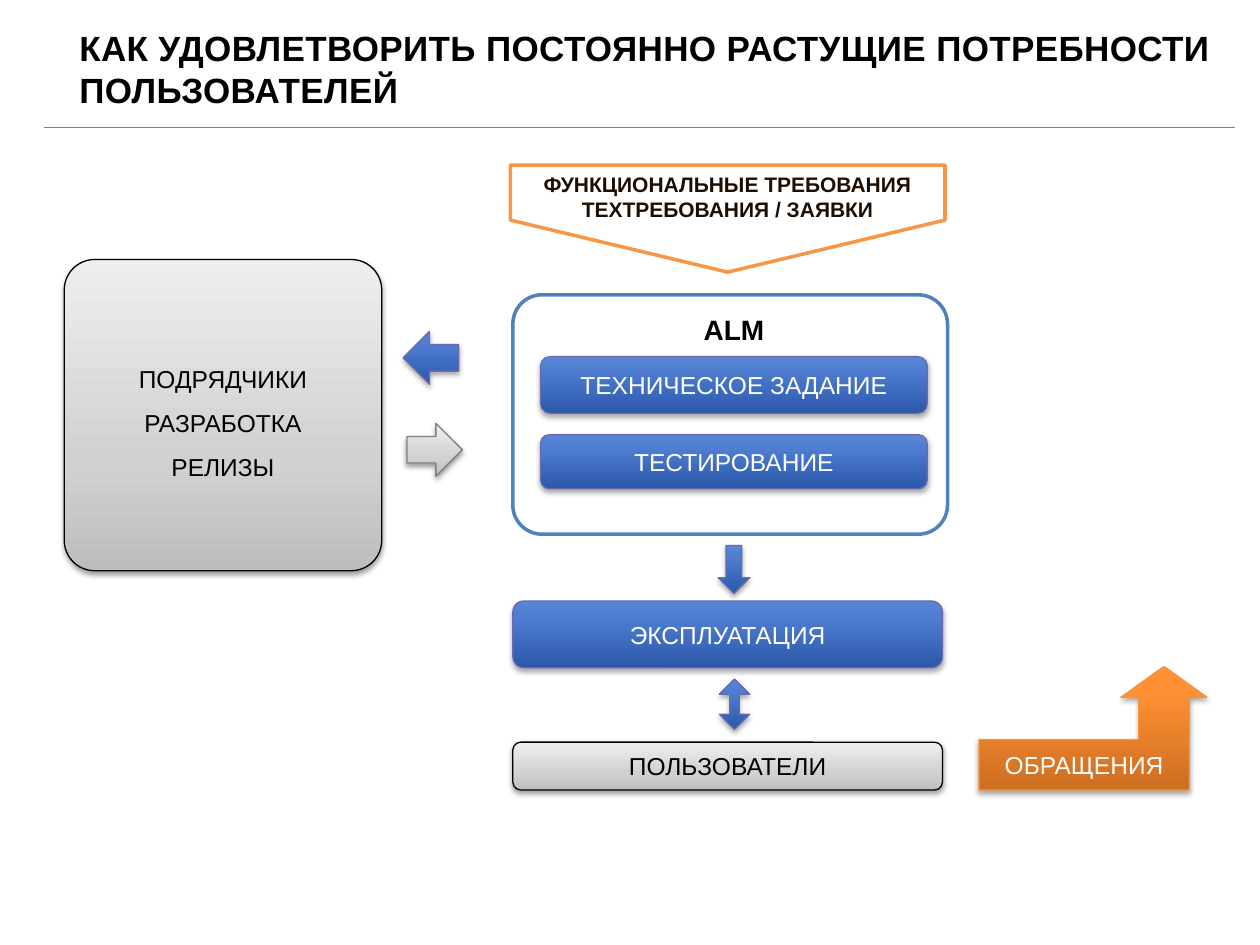
from pptx import Presentation
from pptx.dml.color import RGBColor
from pptx.enum.shapes import MSO_CONNECTOR, MSO_SHAPE as Kind
from pptx.enum.text import MSO_ANCHOR, PP_ALIGN
from pptx.oxml.ns import qn
from pptx.util import Inches, Pt
from lxml.etree import SubElement

COLS, ROWS = 100, 75
BLUE = [(0, "2B58A8"), (76, "4E7DD2"), (100, "5A86D4")]
GREY = [(0, "BDBDBD"), (35, "D1D1D1"), (100, "EEEEEE")]
ORANGE = [(0, "CC6E20"), (80, "FF9034"), (100, "FF9136")]
DARK, SOFT = (35, 1.8), (38, 1.6)  # shadow opacity in percent, distance in points


def color(code):
    return RGBColor.from_string(code)


def node(parent, tag, **attrs):
    item = SubElement(parent, qn(tag))
    for key, value in attrs.items():
        item.set(key, str(value))
    return item


def write(shape, text, size=14, ink="FFFFFF", bold=False, align=PP_ALIGN.CENTER,
          anchor=MSO_ANCHOR.MIDDLE, wrap=True, gap=None, track=None):
    """Fill a shape with one paragraph for each line of text."""
    frame = shape.text_frame
    frame.word_wrap = wrap
    frame.vertical_anchor = anchor
    for i, line in enumerate(text.split("\n")):
        para = frame.paragraphs[0] if i == 0 else frame.add_paragraph()
        para.alignment = align
        if gap:
            para.line_spacing = gap
        run = para.add_run()
        run.text = line
        font = run.font
        font.name, font.size, font.bold = "Arial", Pt(size), bold
        font.color.rgb = color(ink)
        if track:
            run._r.get_or_add_rPr().set("spc", str(track))
    return frame


class Board:
    """A slide on a grid of COLS by ROWS cells."""

    def __init__(self):
        self.deck = Presentation()
        self.deck.slide_width, self.deck.slide_height = Inches(10), Inches(7.5)
        self.slide = self.deck.slides.add_slide(self.deck.slide_layouts[6])

    def scale(self, x, y):
        return (round(self.deck.slide_width * x / COLS),
                round(self.deck.slide_height * y / ROWS))

    def place(self, x, y, w, h):
        return *self.scale(x, y), *self.scale(w, h)

    def label(self, box, text, **style):
        return write(self.slide.shapes.add_textbox(*self.place(*box)), text, **style)

    def rule(self, start, end, ink):
        line = self.slide.shapes.add_connector(
            MSO_CONNECTOR.STRAIGHT, *self.scale(*start), *self.scale(*end))
        line.line.color.rgb, line.line.width = color(ink), Pt(0.75)
        node(line._element.spPr, "a:effectLst")

    def shape(self, kind, box, edge, width=2, adjust=()):
        """Add a white shape with a coloured outline and no shadow."""
        item = self.slide.shapes.add_shape(kind, *self.place(*box))
        for i, value in enumerate(adjust):
            item.adjustments[i] = value
        item.fill.solid()
        item.fill.fore_color.rgb = color("FFFFFF")
        item.line.color.rgb, item.line.width = color(edge), Pt(width)
        item.shadow.inherit = False
        return item

    def glossy(self, kind, box, stops=BLUE, edge="696BB0", shade=DARK,
               adjust=(), text=None, **style):
        """Add a shape with a gradient rising from dark to light, and a shadow."""
        item = self.shape(kind, box, edge, 0.75, adjust)
        item.fill.gradient()
        item.fill.gradient_angle = 90
        props = item._element.spPr
        ramp = props.find(qn("a:gradFill")).find(qn("a:gsLst"))
        ramp.clear()
        for share, code in stops:
            node(node(ramp, "a:gs", pos=share * 1000), "a:srgbClr", val=code)
        alpha, dist = shade
        cast = node(props.find(qn("a:effectLst")), "a:outerShdw", blurRad=Pt(3.1),
                    dist=Pt(dist), dir=5400000, rotWithShape=0)
        node(node(cast, "a:srgbClr", val="000000"), "a:alpha", val=alpha * 1000)
        if text:
            write(item, text, **style)


def main():
    board = Board()
    board.rule((3.5, 10.1), (98, 10.1), "808080")
    title = board.label(
        (0, 1.3, 100.4, 8.2),
        "КАК УДОВЛЕТВОРИТЬ ПОСТОЯННО РАСТУЩИЕ ПОТРЕБНОСТИ ПОЛЬЗОВАТЕЛЕЙ",
        size=20, ink="000000", bold=True, align=PP_ALIGN.LEFT, track=20)
    title.margin_left = Inches(0.63)

    left, wide = 40.7, 34.1
    board.shape(Kind.ROUNDED_RECTANGLE, (left, 23.4, 34.5, 19), "4F81BD",
                adjust=[0.122])
    needs = board.shape(Kind.RIGHT_ARROW, (53.5, 0.1, 8.5, 34.5), "F79646",
                        adjust=[1, 0.486])
    needs.rotation = 90
    frame = write(needs, "ФУНКЦИОНАЛЬНЫЕ ТРЕБОВАНИЯ\nТЕХТРЕБОВАНИЯ / ЗАЯВКИ",
                  size=12, ink="1E0E01", bold=True, anchor=MSO_ANCHOR.TOP)
    frame._txBody.bodyPr.set("vert", "vert270")

    pale = dict(stops=GREY, edge="000000", shade=SOFT, ink="000000")
    for box, text, style in [
        ((5.1, 20.6, 25.2, 24.7), "ПОДРЯДЧИКИ\nРАЗРАБОТКА\nРЕЛИЗЫ",
         dict(pale, adjust=[0.098], gap=1.5)),
        ((42.9, 28.3, 30.7, 4.5), "ТЕХНИЧЕСКОЕ ЗАДАНИЕ", {}),
        ((42.9, 34.5, 30.7, 4.3), "ТЕСТИРОВАНИЕ", {}),
        ((left, 47.7, wide, 5.3), "ЭКСПЛУАТАЦИЯ", {}),
        ((left, 58.9, wide, 3.8), "ПОЛЬЗОВАТЕЛИ", pale),
    ]:
        board.glossy(Kind.ROUNDED_RECTANGLE, box, text=text, **style)
    board.label((54.8, 24.3, 6.9, 3.7), "ALM", size=16, ink="000000", bold=True,
                anchor=MSO_ANCHOR.TOP, wrap=False)

    board.glossy(Kind.LEFT_ARROW, (32, 26.3, 4.4, 4.2))
    board.glossy(Kind.RIGHT_ARROW, (32.3, 33.6, 4.4, 4.2), GREY, "808080", SOFT)
    board.glossy(Kind.DOWN_ARROW, (57, 43.3, 2.5, 3.8))
    board.glossy(Kind.UP_DOWN_ARROW, (57.1, 53.9, 2.4, 4), adjust=[0.5, 0.309])
    board.glossy(Kind.BENT_UP_ARROW, (77.7, 52.9, 18.1, 9.8), ORANGE, "F69240",
                 adjust=[0.409, 0.349, 0.25], text="ОБРАЩЕНИЯ")
    board.deck.save("out.pptx")


if __name__ == "__main__":
    main()
